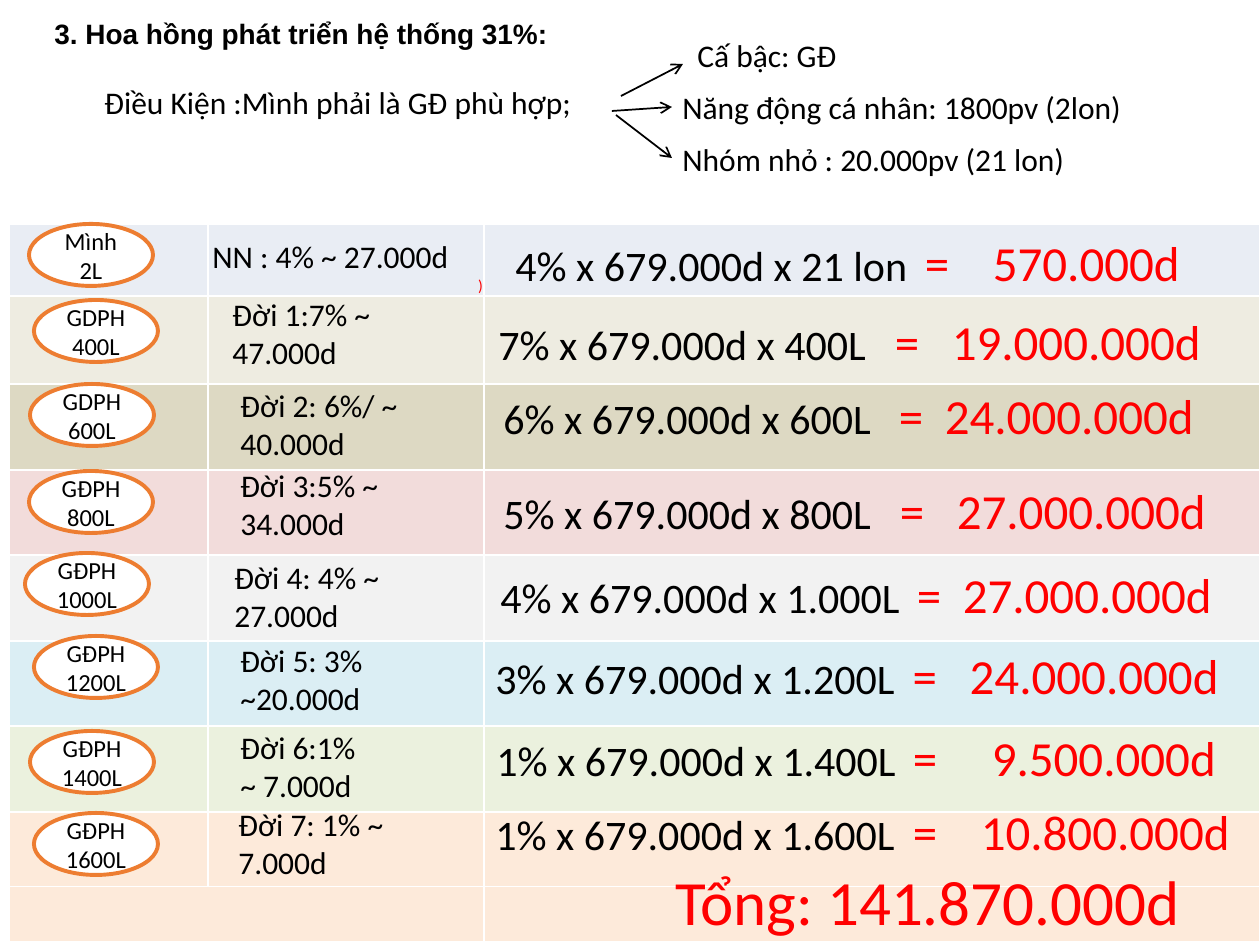
from lxml import etree
from pptx import Presentation
from pptx.dml.color import RGBColor
from pptx.enum.shapes import MSO_CONNECTOR, MSO_SHAPE
from pptx.enum.text import MSO_ANCHOR as ANCHOR, MSO_AUTO_SIZE as AUTO, PP_ALIGN as ALIGN
from pptx.oxml.ns import qn
from pptx.util import Pt

PX = 914400 // 126
COLORS = {
    "black": "000000", "red": "FF0000", "white": "FFFFFF", "orange": "ED7D31",
    "blue": "E9EDF4", "cream": "EEECE1", "tan": "DDD9C3", "rose": "F2DCDB",
    "grey": "F2F2F2", "aqua": "DBEEF4", "green": "EBF1DE", "peach": "FDEADA",
}

COLUMN_WIDTHS = [199, 276, 776]
# Height and fill of each table row
BANDS = [
    (72, "blue"), (88, "cream"), (86, "tan"), (85, "rose"), (86, "grey"),
    (85, "aqua"), (86, "green"), (75, "peach"), (55, "peach"),
]
# Rank, volume, left, top
MEMBERS = [
    ("Mình", "2L", 29, 224), ("GDPH", "400L", 34, 300),
    ("GDPH", "600L", 30, 384), ("GĐPH", "800L", 29, 471),
    ("GĐPH", "1000L", 25, 553), ("GĐPH", "1200L", 34, 636),
    ("GĐPH", "1400L", 30, 731), ("GĐPH", "1600L", 34, 813),
]
# Rate, left, top, width
RATES = [
    ("NN : 4% ~ 27.000d", 200, 231, 302), ("Đời 1:7% ~ 47.000d", 220, 289, 183),
    ("Đời 2: 6%/ ~ 40.000d", 228, 380, 185), ("Đời 3:5% ~ 34.000d", 228, 460, 174),
    ("Đời 4: 4% ~ 27.000d", 222, 552, 190), ("Đời 5: 3% ~20.000d", 228, 635, 203),
    ("Đời 6:1% ~ 7.000d", 228, 722, 159), ("Đời 7: 1% ~ 7.000d", 226, 799, 176),
]
# Formula, amount, left, top, width, then the x of the equals sign and of the amount
COMMISSIONS = [
    ("4% x 679.000d x 21 lon", "570.000d", 503, 226, 724, 925, 993),
    ("7% x 679.000d x 400L", "19.000.000d", 486, 305, 816, 895, 952),
    ("6% x 679.000d x 600L", "24.000.000d", 491, 379, 840, 899, 945),
    ("5% x 679.000d x 800L", "27.000.000d", 491, 474, 813, 900, 957),
    ("4% x 679.000d x 1.000L", "27.000.000d", 488, 558, 791, 917, 963),
    ("3% x 679.000d x 1.200L", "24.000.000d", 483, 639, 756, 913, 970),
    ("1% x 679.000d x 1.400L", "9.500.000d", 484, 721, 813, 913, 992),
    ("1% x 679.000d x 1.600L", "10.800.000d", 483, 795, 827, 913, 981),
]
CONDITIONS = [
    ("Cấ bậc: GĐ", 685, 30, 202),
    ("Năng động cá nhân: 1800pv (2lon)", 670, 82, 542),
    ("Nhóm nhỏ : 20.000pv (21 lon)", 670, 134, 491),
]
ARROWS = [(621, 96, 683, 64), (612, 111, 672, 107), (616, 115, 672, 158)]


def px(*lengths):
    return [length * PX for length in lengths]


def rgb(color):
    return RGBColor.from_string(COLORS[color])


def write(paragraph, text, size=18, color="black", font="Calibri", bold=False, align=None):
    run = paragraph.add_run()
    run.text = text
    run.font.size = Pt(size)
    run.font.name = font
    run.font.bold = bold
    run.font.color.rgb = rgb(color)
    if align is not None:
        paragraph.alignment = align


def add_label(slide, text, left, top, width, height=50, **style):
    frame = slide.shapes.add_textbox(*px(left, top, width, height)).text_frame
    frame.word_wrap = True
    frame.auto_size = AUTO.SHAPE_TO_FIT_TEXT
    paragraph = frame.paragraphs[0]
    write(paragraph, text, **style)
    return paragraph


def add_member(slide, rank, volume, left, top):
    oval = slide.shapes.add_shape(MSO_SHAPE.FLOWCHART_CONNECTOR, *px(left, top, 124, 62))
    oval.shadow.inherit = False
    oval.fill.solid()
    oval.fill.fore_color.rgb = rgb("white")
    oval.line.color.rgb = rgb("orange")
    oval.line.width = Pt(2.25)
    frame = oval.text_frame
    frame.word_wrap = False
    frame.vertical_anchor = ANCHOR.MIDDLE
    write(frame.paragraphs[0], rank, size=14, align=ALIGN.CENTER)
    write(frame.add_paragraph(), volume, size=14, align=ALIGN.CENTER)


def add_arrow(slide, *ends):
    arrow = slide.shapes.add_connector(MSO_CONNECTOR.STRAIGHT, *px(*ends))
    arrow.line.color.rgb = rgb("black")
    arrow.line.width = Pt(1)
    etree.SubElement(arrow.line._get_or_add_ln(), qn("a:tailEnd"), type="arrow")
    etree.SubElement(arrow._element.spPr, qn("a:effectLst"))


def add_commission(slide, formula, amount, left, top, width, *stops):
    paragraph = add_label(slide, formula, left, top, width, 72, size=24)
    write(paragraph, f"\t=\t{amount}", size=28, color="red")
    # Tab stops are measured from the text edge, inside the 0.1 inch inset
    tabs = etree.SubElement(paragraph._p.get_or_add_pPr(), qn("a:tabLst"))
    for stop in stops:
        position = (stop - left) * PX - 91440
        etree.SubElement(tabs, qn("a:tab"), pos=str(position), algn="l")


def add_bands(slide):
    heights = [height for height, _ in BANDS]
    frame = slide.shapes.add_table(len(BANDS), len(COLUMN_WIDTHS),
                                   *px(9, 224, sum(COLUMN_WIDTHS), sum(heights)))
    table = frame.table
    table.first_row = table.horz_banding = False
    for column, width in zip(table.columns, COLUMN_WIDTHS):
        column.width = width * PX
    for row, (height, color) in zip(table.rows, BANDS):
        row.height = height * PX
        for cell in row.cells:
            cell.fill.solid()
            cell.fill.fore_color.rgb = rgb(color)
    table.cell(8, 0).merge(table.cell(8, 1))

    bracket = table.cell(0, 1)
    bracket.vertical_anchor = ANCHOR.BOTTOM
    bracket.margin_left = bracket.margin_right = bracket.margin_top = PX
    bracket.margin_bottom = 0
    write(bracket.text_frame.paragraphs[0], ")", size=9, color="red", align=ALIGN.RIGHT)


def main():
    deck = Presentation()
    deck.slide_width, deck.slide_height = px(1260, 945)
    slide = deck.slides.add_slide(deck.slide_layouts[6])

    # Heading and table background
    add_label(slide, "3. Hoa hồng phát triển hệ thống 31%:", 42, 10, 630, 47,
              size=16, font="Arial", bold=True)
    add_bands(slide)
    for member in MEMBERS:
        add_member(slide, *member)

    # Conditions
    add_label(slide, "Điều Kiện :Mình phải là GĐ phù hợp;", 92, 77, 601)
    for arrow in ARROWS:
        add_arrow(slide, *arrow)
    for condition in CONDITIONS:
        add_label(slide, *condition)

    # Rates, commissions and total
    for rate in RATES:
        add_label(slide, *rate)
    for commission in COMMISSIONS:
        add_commission(slide, *commission)
    add_label(slide, "Tổng: 141.870.000d", 663, 856, 667, 89, size=36, color="red")

    deck.save("out.pptx")


if __name__ == "__main__":
    main()
